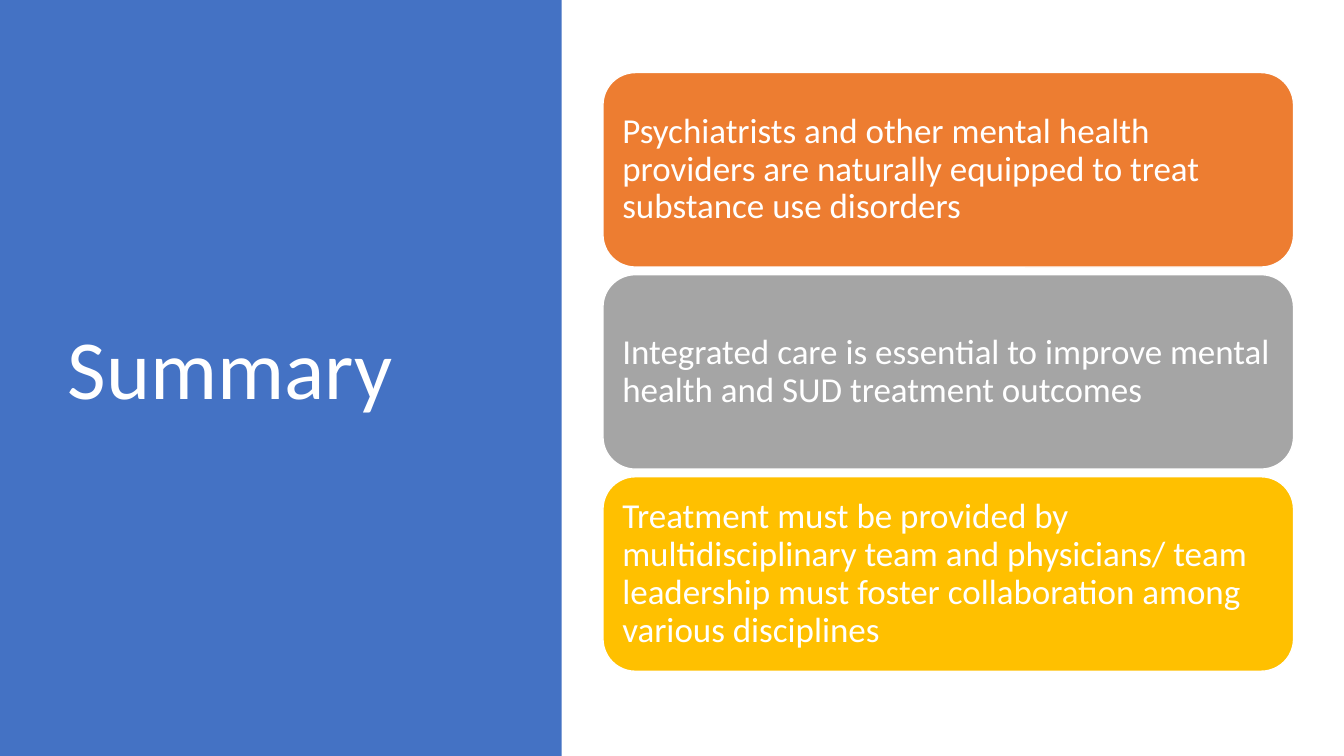
from pptx import Presentation
from pptx.dml.color import RGBColor
from pptx.enum.shapes import MSO_SHAPE
from pptx.enum.text import MSO_ANCHOR, PP_ALIGN
from pptx.util import Inches, Pt

WHITE = RGBColor(0xFF, 0xFF, 0xFF)
BLUE = RGBColor(0x44, 0x72, 0xC4)
ORANGE = RGBColor(0xED, 0x7D, 0x31)
GRAY = RGBColor(0xA5, 0xA5, 0xA5)
GOLD = RGBColor(0xFF, 0xC0, 0x00)

CARD_LEFT, CARD_TOP = 5.98, 0.72
CARD_WIDTH, CARD_HEIGHT = 6.85, 1.93
CARD_PITCH = 2.005
CARDS = [
    (ORANGE, "Psychiatrists and other mental health providers are naturally "
             "equipped to treat substance use disorders"),
    (GRAY, "Integrated care is essential to improve mental health and SUD "
           "treatment outcomes"),
    (GOLD, "Treatment must be provided by multidisciplinary team and physicians/ "
           "team leadership must foster collaboration among various disciplines"),
]


def set_text(shape, text, size):
    """Fill a shape with white, left-aligned, vertically centred text."""
    tf = shape.text_frame
    tf.text = text
    tf.word_wrap = True
    tf.vertical_anchor = MSO_ANCHOR.MIDDLE
    p = tf.paragraphs[0]
    p.alignment = PP_ALIGN.LEFT
    p.line_spacing = 0.9
    font = p.runs[0].font
    font.name = "Calibri"
    font.size = Pt(size)
    font.color.rgb = WHITE
    return tf


prs = Presentation()
prs.slide_width, prs.slide_height = Inches(13.33), Inches(7.5)
s = prs.slides.add_slide(prs.slide_layouts[5])

title = s.shapes.title
title.left, title.top = Inches(0.57), Inches(0.68)
title.width, title.height = Inches(4.16), Inches(6.02)
set_text(title, "Summary", 60)

panel = s.shapes.add_shape(MSO_SHAPE.RECTANGLE, 0, 0, Inches(5.57), prs.slide_height)
panel.shadow.inherit = False
panel.fill.solid()
panel.fill.fore_color.rgb = BLUE
panel.line.fill.background()
title._element.addprevious(panel._element)  # panel sits behind the title

for row, (color, text) in enumerate(CARDS):
    card = s.shapes.add_shape(
        MSO_SHAPE.ROUNDED_RECTANGLE,
        Inches(CARD_LEFT), Inches(CARD_TOP + row * CARD_PITCH),
        Inches(CARD_WIDTH), Inches(CARD_HEIGHT))
    card.shadow.inherit = False
    card.fill.solid()
    card.fill.fore_color.rgb = color
    card.line.color.rgb = WHITE
    card.line.width = Pt(1)
    tf = set_text(card, text, 25)
    # The rounded outline adds its own inset of about 0.09 inch.
    tf.margin_left = tf.margin_right = Inches(0.1)
    tf.margin_top = tf.margin_bottom = Inches(0.1)

prs.save("out.pptx")
